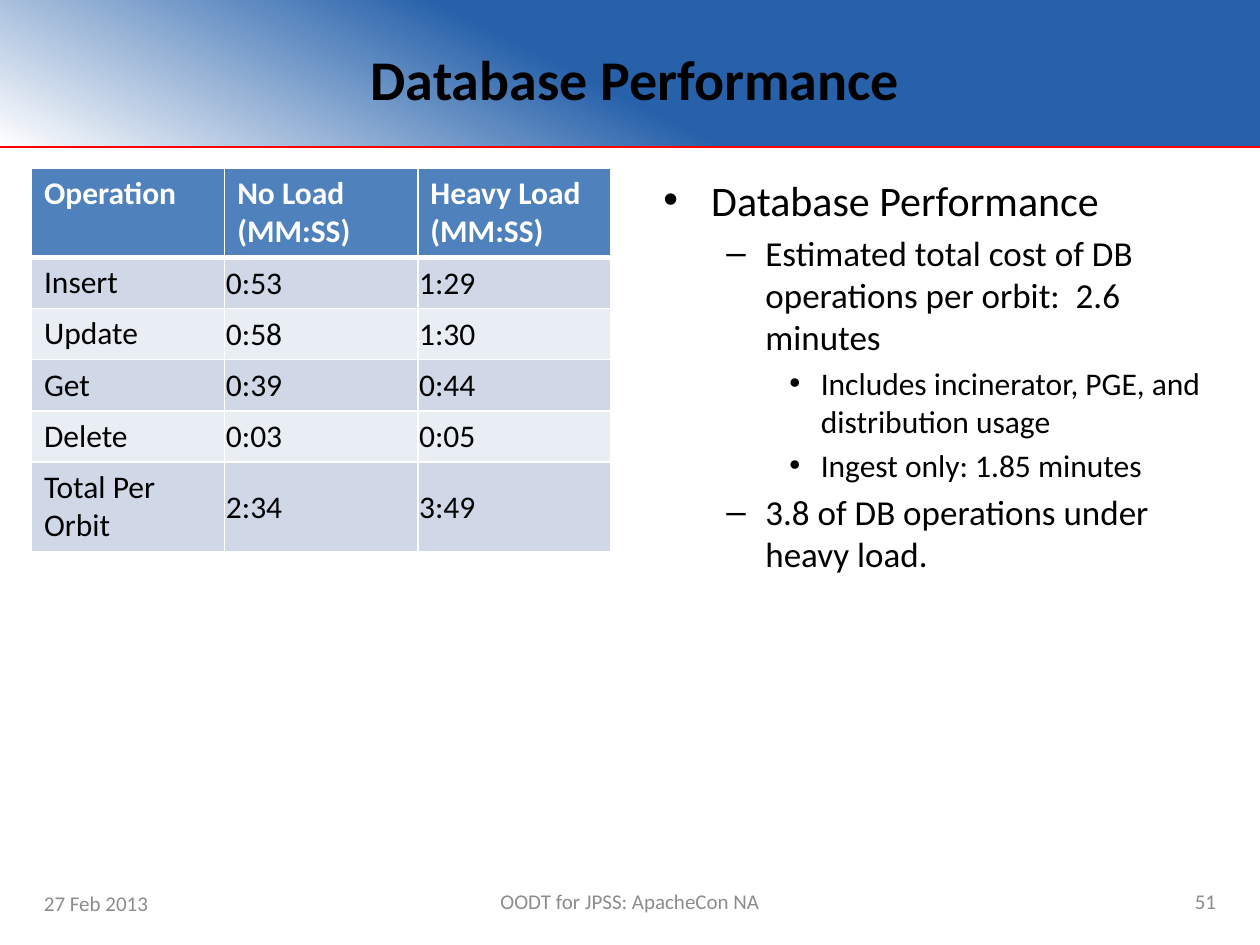
import pptx
import pptx.util
import pptx.dml.color
import pptx.enum.shapes
import pptx.enum.text
import pptx.oxml
import pptx.oxml.ns
from lxml import etree

ALIGN = pptx.enum.text.PP_ALIGN
ANCHOR = pptx.enum.text.MSO_ANCHOR
COLUMNS, ROWS = 120, 90
OPERATIONS = [
    ("Operation", "No Load (MM:SS)", "Heavy Load (MM:SS)"),
    ("Insert", "0:53", "1:29"),
    ("Update", "0:58", "1:30"),
    ("Get", "0:39", "0:44"),
    ("Delete", "0:03", "0:05"),
    ("Total Per Orbit", "2:34", "3:49"),
]
FINDINGS = [
    (0, "Database Performance"),
    (1, "Estimated total cost of DB operations per orbit:  2.6 minutes"),
    (2, "Includes incinerator, PGE, and distribution usage"),
    (2, "Ingest only: 1.85 minutes"),
    (1, "3.8 of DB operations under heavy load."),
]
BULLETS = [("•", 24, 0.38, 0.38), ("–", 20, 0.81, 0.31), ("•", 18, 1.25, 0.25)]


def color(code):
    return pptx.dml.color.RGBColor.from_string(code)


class SlideBuilder:
    """Draws styled elements on one slide, placed on a grid of 120 by 90 units."""

    font = "Calibri"
    ink, white, gray = "000000", "FFFFFF", "8C8C8C"
    blue, red = "2661AA", "FF0000"
    header, bands = "4F81BD", ("D0D8E8", "E9EDF4")

    def __init__(self, deck):
        self.deck = deck
        self.slide = deck.slides.add_slide(deck.slide_layouts[5])
        self.shapes = self.slide.shapes

    def place(self, left, top, width, height):
        across = self.deck.slide_width / COLUMNS
        down = self.deck.slide_height / ROWS
        return [round(value) for value in (left * across, top * down, width * across, height * down)]

    def add_span(self, para, text, size, code, bold=False):
        span = para.add_run()
        span.text = text
        span.font.name = self.font
        span.font.size = pptx.util.Pt(size)
        span.font.bold = bold
        span.font.color.rgb = color(code)

    def banner(self, left, top, width, height):
        bar = self.shapes.add_shape(
            pptx.enum.shapes.MSO_SHAPE.RECTANGLE, *self.place(left, top, width, height))
        bar.shadow.inherit = False
        bar.line.fill.background()
        bar.fill.gradient()
        bar.fill.gradient_angle = 63
        for stop, code, position in zip(bar.fill.gradient_stops, (self.white, self.blue), (0, 0.47)):
            stop.color.rgb = color(code)
            stop.position = position

    def rule(self, left, top, width):
        x, y, length, _ = self.place(left, top, width, 0)
        line = self.shapes.add_connector(
            pptx.enum.shapes.MSO_CONNECTOR.STRAIGHT, x, y, x + length, y)
        line.line.color.rgb = color(self.red)
        line.line.width = pptx.util.Pt(1.25)
        etree.SubElement(line._element.spPr, pptx.oxml.ns.qn("a:effectLst"))

    def title(self, text, *area):
        box = self.shapes.title
        box.left, box.top, box.width, box.height = self.place(*area)
        box.text_frame.vertical_anchor = ANCHOR.MIDDLE
        para = box.text_frame.paragraphs[0]
        para.alignment = ALIGN.CENTER
        self.add_span(para, text, 32, self.ink, True)
        self.shapes._spTree.append(box._element)

    def frame(self, area, anchor=ANCHOR.TOP):
        frame = self.shapes.add_textbox(*self.place(*area)).text_frame
        frame.word_wrap = True
        frame.vertical_anchor = anchor
        return frame

    def label(self, text, align, anchor, *area):
        para = self.frame(area, anchor).paragraphs[0]
        para.alignment = align
        self.add_span(para, text, 12, self.gray)

    def outline(self, properties, number):
        for side in "LRTB":
            heavy = (side == "B" and number == 0) or (side == "T" and number == 1)
            properties.append(pptx.oxml.parse_xml(
                f'<a:ln{side} {pptx.oxml.ns.nsdecls("a")} w="{pptx.util.Pt(3 if heavy else 1)}">'
                f'<a:solidFill><a:srgbClr val="{self.white}"/></a:solidFill></a:ln{side}>'))

    def table(self, data, left, top, width, row_height):
        place = self.place(left, top, width, row_height * len(data))
        table = self.shapes.add_table(len(data), len(data[0]), *place).table
        for number, values in enumerate(data):
            for column, text in enumerate(values):
                cell = table.cell(number, column)
                heading = number == 0
                self.outline(cell._tc.get_or_add_tcPr(), number)
                cell.fill.solid()
                cell.fill.fore_color.rgb = color(
                    self.header if heading else self.bands[(number - 1) % 2])
                if column and not heading:
                    cell.vertical_anchor = ANCHOR.MIDDLE
                    cell.margin_left = cell.margin_right = cell.margin_top = pptx.util.Inches(0.01)
                    cell.margin_bottom = 0
                self.add_span(cell.text_frame.paragraphs[0], text, 18,
                              self.white if heading else self.ink, heading)

    def bullets(self, items, *area):
        frame = self.frame(area)
        for index, (level, text) in enumerate(items):
            mark, size, margin, hanging = BULLETS[level]
            para = frame.add_paragraph() if index else frame.paragraphs[0]
            para.level = level
            properties = para._p.get_or_add_pPr()
            properties.set("marL", str(pptx.util.Inches(margin)))
            properties.set("indent", str(-pptx.util.Inches(hanging)))
            for tag, key, value in (("a:buFont", "typeface", "Arial"), ("a:buChar", "char", mark)):
                etree.SubElement(properties, pptx.oxml.ns.qn(tag)).set(key, value)
            para.space_before = pptx.util.Pt(size * 0.2 if index else 0)
            self.add_span(para, text, size, self.ink)


def main():
    deck = pptx.Presentation()
    deck.slide_width, deck.slide_height = pptx.util.Inches(10), pptx.util.Inches(7.5)
    page = SlideBuilder(deck)
    page.banner(0, 0, COLUMNS, 14)
    page.rule(0, 14, COLUMNS)
    page.title("Database Performance", 14, 1.7, 93, 11.4)
    page.table(OPERATIONS, 3, 16, 55.2, 4.87)
    page.bullets(FINDINGS, 62, 16, 55.2, 66)
    page.label("27 Feb 2013", ALIGN.LEFT, ANCHOR.TOP, 3, 84.25, 28, 4.8)
    page.label("OODT for JPSS: ApacheCon NA", ALIGN.CENTER, ANCHOR.MIDDLE, 41, 83.4, 38, 4.8)
    page.label("51", ALIGN.RIGHT, ANCHOR.MIDDLE, 89, 83.4, 28, 4.8)
    deck.save("out.pptx")


if __name__ == "__main__":
    main()
